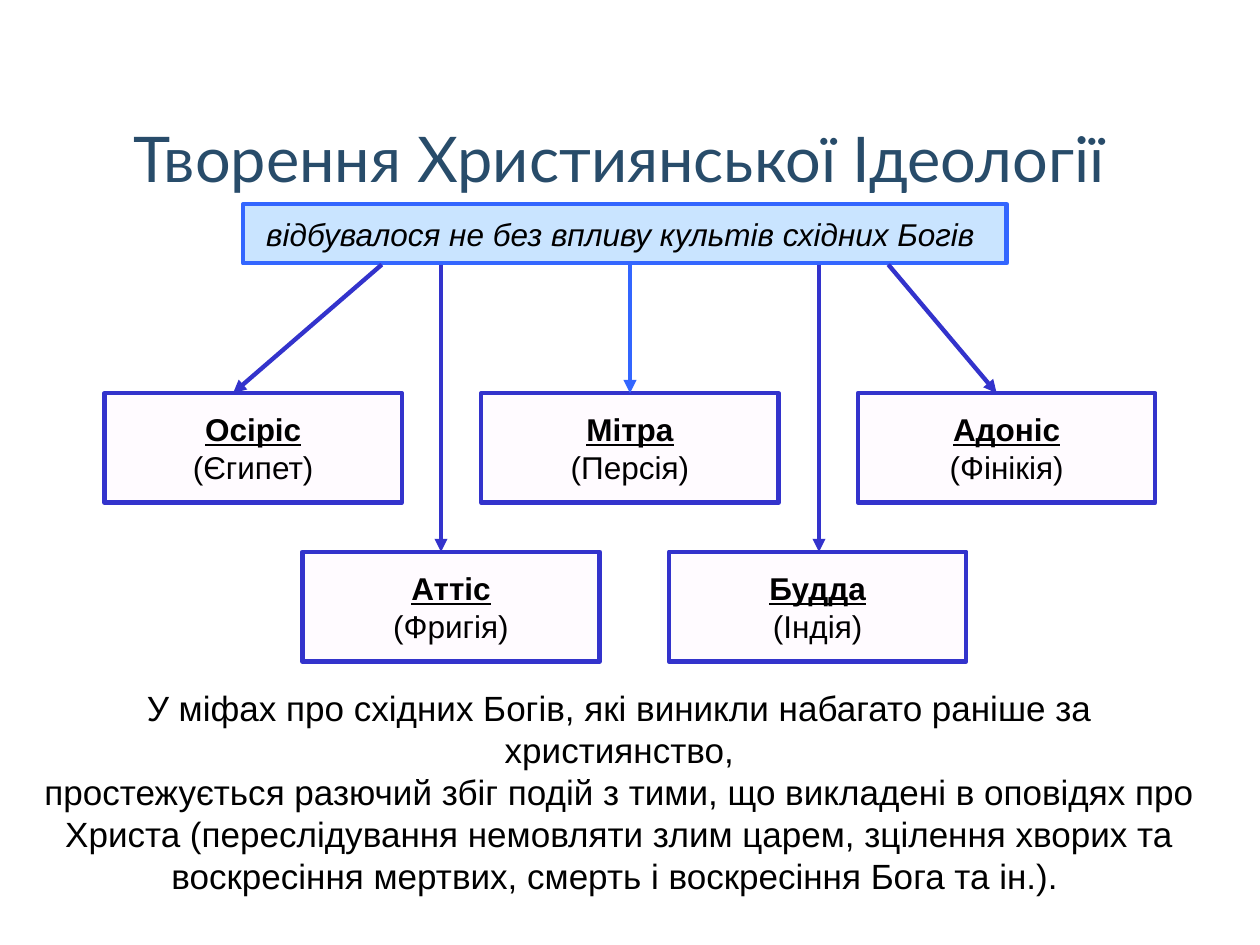
from lxml import etree
from pptx import Presentation
from pptx.dml.color import RGBColor
from pptx.enum import shapes, text
from pptx.oxml.ns import qn
from pptx.util import Inches, Pt

BLUE, INDIGO = "3366FF", "3333CC"


def color(value):
    return RGBColor.from_string(value)


class Deck:
    font, ink, stroke = "Arial", "000000", 2.5

    def __init__(self, slide):
        self.slide = slide

    def set_text(self, shape, lines):
        """Fill a shape with centred lines, each a list of (text, size, style) runs."""
        frame = shape.text_frame
        frame.word_wrap = True
        frame.vertical_anchor = text.MSO_ANCHOR.MIDDLE
        for i, runs in enumerate(lines):
            para = frame.paragraphs[0] if i == 0 else frame.add_paragraph()
            para.alignment = text.PP_ALIGN.CENTER
            for words, size, style in runs:
                run = para.add_run()
                run.text = words
                font = run.font
                font.size = Pt(size)
                font.name = style.get("font", self.font)
                font.color.rgb = color(style.get("ink", self.ink))
                font.bold = style.get("bold", False)
                font.italic = style.get("italic", False)
                font.underline = style.get("under", False)

    def label(self, x, y, w, h, lines):
        box = self.slide.shapes.add_textbox(Inches(x), Inches(y), Inches(w), Inches(h))
        self.set_text(box, lines)

    def box(self, x, y, w, h, fill, line, lines):
        shape = self.slide.shapes.add_shape(
            shapes.MSO_SHAPE.RECTANGLE, Inches(x), Inches(y), Inches(w), Inches(h))
        shape.shadow.inherit = False
        shape.fill.solid()
        shape.fill.fore_color.rgb = color(fill)
        shape.line.color.rgb = color(line)
        shape.line.width = Pt(self.stroke)
        self.set_text(shape, lines)

    def arrow(self, x1, y1, x2, y2, line):
        link = self.slide.shapes.add_connector(
            shapes.MSO_CONNECTOR.STRAIGHT, Inches(x1), Inches(y1), Inches(x2), Inches(y2))
        link.line.color.rgb = color(line)
        link.line.width = Pt(self.stroke)
        props = link.element.spPr
        etree.SubElement(props.find(qn("a:ln")), qn("a:tailEnd"), type="triangle")
        etree.SubElement(props, qn("a:effectLst"))


def main():
    prs = Presentation()
    prs.slide_width, prs.slide_height = Inches(10), Inches(7.5)
    deck = Deck(prs.slides.add_slide(prs.slide_layouts[6]))

    deck.label(0.5, 0.75, 8.83, 1, [
        [("Творення Християнської Ідеології", 36, {"font": "Lato", "ink": "284C6A"})]])
    deck.box(1.93, 1.62, 6.06, 0.47, "C9E4FF", BLUE, [
        [("відбувалося не без впливу культів східних Богів ", 18, {"italic": True})]])

    top, low = 3.12, 4.38
    gods = [
        (0.83, top, "Осіріс", "(Єгипет)"),
        (3.82, top, "Мітра", "(Персія)"),
        (6.81, top, "Адоніс", "(Фінікія)"),
        (2.4, low, "Аттіс", "(Фригія)"),
        (5.31, low, "Будда", "(Індія)"),
    ]
    for x, y, name, land in gods:
        deck.box(x, y, 2.36, 0.87, "FFFBFF", INDIGO, [
            [(name, 18, {"bold": True, "under": True})], [(land, 18, {})]])

    arrows = [
        (3.03, 1.85, top, INDIGO),
        (5, 5, top, BLUE),
        (7.05, 7.91, top, INDIGO),
        (3.5, 3.5, low, INDIGO),
        (6.5, 6.5, low, INDIGO),
    ]
    for start, end, y, line in arrows:
        deck.arrow(start, 2.1, end, y, line)

    myths = [
        "У міфах про східних Богів, які виникли набагато раніше за християнство,",
        "простежується разючий збіг подій з тими, що викладені в оповідях про",
        "Христа (переслідування немовляти злим царем, зцілення хворих та",
        "воскресіння мертвих, смерть і воскресіння Бога та ін.).",
    ]
    lines = [[(words, 20, {})] for words in myths]
    lines[-1].append((" ", 18, {}))
    deck.label(0.12, 5.57, 9.59, 1.43, lines)

    prs.save("out.pptx")


if __name__ == "__main__":
    main()
